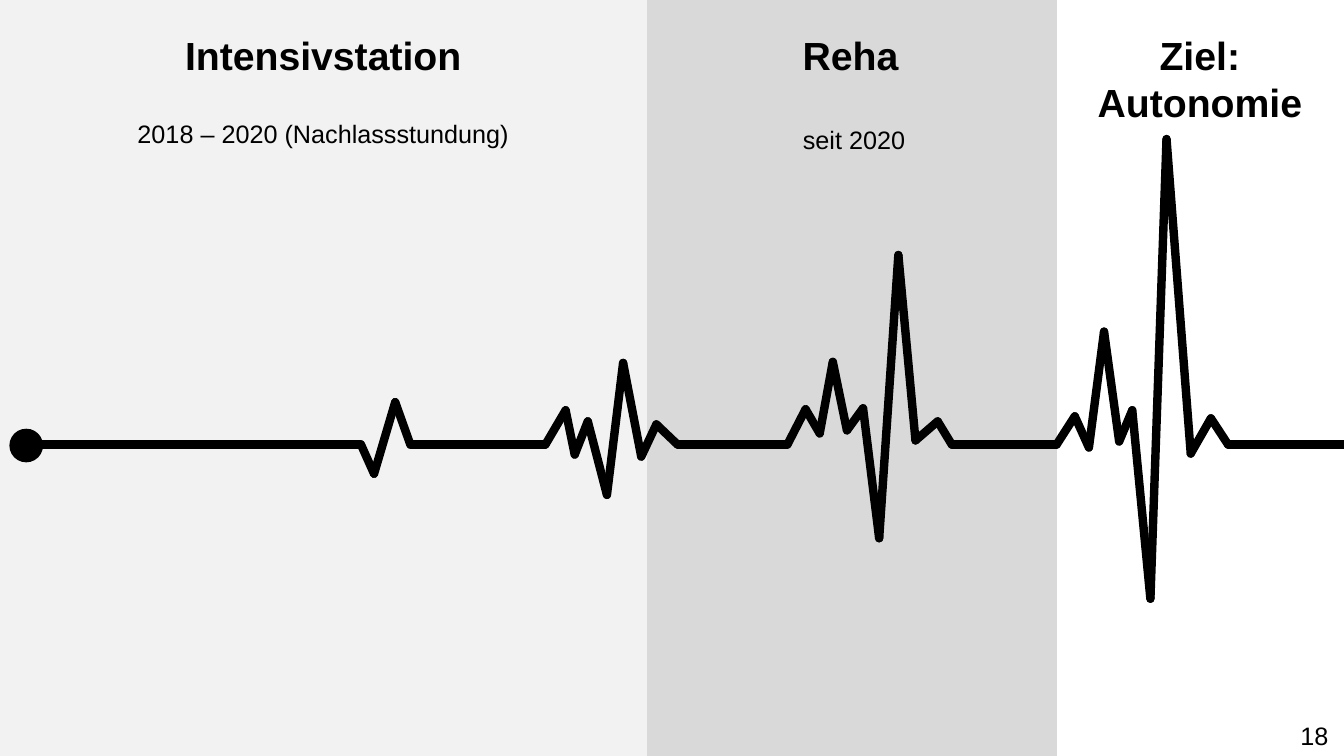
from itertools import pairwise
from lxml.etree import SubElement
from pptx import Presentation
from pptx.dml.color import RGBColor
from pptx.enum.shapes import MSO_CONNECTOR, MSO_SHAPE
from pptx.enum.text import MSO_ANCHOR, PP_ALIGN
from pptx.oxml.ns import qn
from pptx.util import Inches, Pt

COLORS = {"ink": "000000", "white": "FFFFFF", "mid": "D9D9D9", "light": "F2F2F2"}
BASE = 4.41


def color(name):
    return RGBColor.from_string(COLORS[name])


def write(shape, text, size, bold=False, align=PP_ALIGN.CENTER):
    tf = shape.text_frame
    tf.word_wrap = True
    tf.vertical_anchor = MSO_ANCHOR.TOP
    tf.text = text
    for p in tf.paragraphs:
        p.alignment = align
        for r in p.runs:
            r.font.name = "Arial"
            r.font.size = Pt(size)
            r.font.bold = bold
            r.font.color.rgb = color("ink")


prs = Presentation()
prs.slide_width = Inches(13.33)
prs.slide_height = Inches(7.5)
s = prs.slides.add_slide(prs.slide_layouts[6])

phases = [
    (10.44, 2.92, "white", "Ziel:\nAutonomie"),
    (6.39, 4.09, "mid", "Reha"),
    (0, 6.41, "light", "Intensivstation"),
]
for left, width, fill, title in phases:
    sp = s.shapes.add_shape(
        MSO_SHAPE.RECTANGLE, Inches(left), 0, Inches(width), Inches(7.5))
    sp.shadow.inherit = False
    if fill == "white":
        sp.fill.background()
    else:
        sp.fill.solid()
        sp.fill.fore_color.rgb = color(fill)
    sp.line.color.rgb = color(fill)
    sp.line.width = Pt(1)
    sp.text_frame.margin_top = Inches(0.31)
    write(sp, title, 28, bold=True)

pulse = [
    (0.33, BASE), (3.58, BASE), (3.71, 4.7), (3.92, 3.99), (4.07, BASE),
    (5.41, BASE), (5.61, 4.07), (5.7, 4.51), (5.83, 4.18), (6.02, 4.91),
    (6.18, 3.6), (6.36, 4.53), (6.51, 4.21), (6.72, BASE),
    (7.81, BASE), (7.99, 4.06), (8.13, 4.3), (8.26, 3.59), (8.4, 4.27),
    (8.56, 4.05), (8.72, 5.34), (8.91, 2.53), (9.08, 4.37), (9.3, 4.18),
    (9.44, BASE), (10.48, BASE), (10.66, 4.13), (10.8, 4.44), (10.95, 3.29),
    (11.1, 4.38), (11.23, 4.07), (11.41, 5.94), (11.57, 1.38), (11.81, 4.5),
    (12.01, 4.15), (12.18, BASE), (13.33, BASE),
]
heartbeat = s.shapes.add_group_shape()
for (x1, y1), (x2, y2) in pairwise(pulse):
    beat = heartbeat.shapes.add_connector(
        MSO_CONNECTOR.STRAIGHT, Inches(x1), Inches(y1), Inches(x2), Inches(y2))
    beat.line.color.rgb = color("ink")
    beat.line.width = Pt(6)
    beat.line._get_or_add_ln().set("cap", "rnd")
    SubElement(beat._element.spPr, qn("a:effectLst"))

dot = heartbeat.shapes.add_shape(
    MSO_SHAPE.OVAL, Inches(0.1), Inches(4.26), Inches(0.32), Inches(0.32))
dot.shadow.inherit = False
dot.fill.solid()
dot.fill.fore_color.rgb = color("ink")
dot.line.color.rgb = color("ink")
dot.line.width = Pt(1)

labels = [
    (12.8, 7.1, 0.53, "18", PP_ALIGN.LEFT),
    (0, 1.12, 6.41, "2018 – 2020 (Nachlassstundung)", PP_ALIGN.CENTER),
    (6.45, 1.18, 4.04, "seit 2020", PP_ALIGN.CENTER),
]
for left, top, width, text, align in labels:
    box = s.shapes.add_textbox(
        Inches(left), Inches(top), Inches(width), Inches(0.4))
    write(box, text, 18, align=align)

prs.save("out.pptx")
